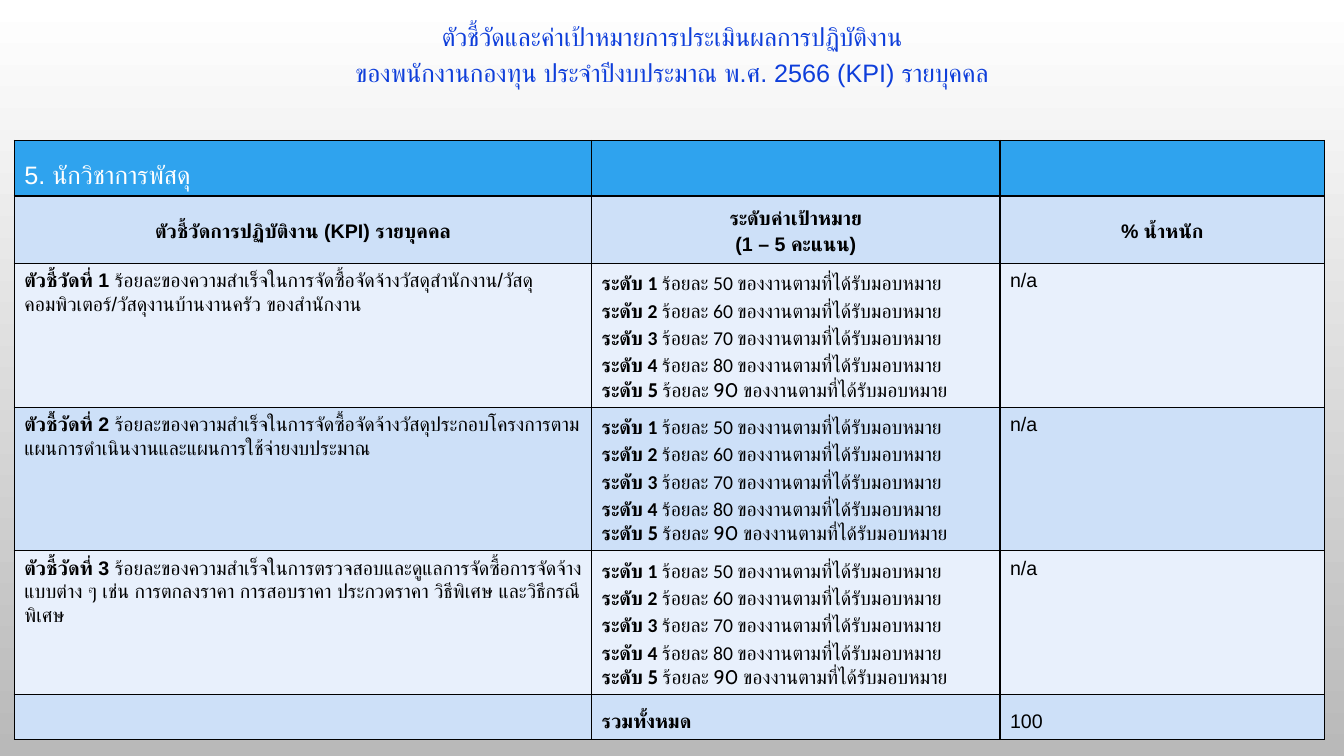
from dataclasses import dataclass
from typing import Optional, Union

from lxml.etree import SubElement
from pptx import Presentation
from pptx.dml.color import RGBColor
from pptx.enum.text import MSO_ANCHOR, MSO_AUTO_SIZE, PP_ALIGN
from pptx.oxml.ns import qn
from pptx.table import Table, _Cell
from pptx.text.text import TextFrame
from pptx.util import Cm, Length, Pt

COLORS = {
    "title": "0E3EDA", "head": "2FA3EE", "pale": "E8F0FC", "mid": "CDE0F8",
    "line": "000000", "text": "000000", "white": "FFFFFF", "grey": "B9B9B9",
}
WIDTHS = [14.55, 10.29, 8.18]
HEIGHTS = [1.4, 1.7, 3.56, 3.56, 3.56, 1.14]
TIGHT = Pt(16.8)


@dataclass
class Goal:
    name: str
    detail: str
    fill: str


GOALS = [
    Goal("ตัวชี้วัดที่ 1 ", "ร้อยละของความสำเร็จในการจัดซื้อจัดจ้างวัสดุสำนักงาน/วัสดุ"
         "คอมพิวเตอร์/วัสดุงานบ้านงานครัว ของสำนักงาน", "pale"),
    Goal("ตัวชี้วัดที่ 2 ", "ร้อยละของความสำเร็จในการจัดซื้อจัดจ้างวัสดุประกอบโครงการตาม"
         "แผนการดำเนินงานและแผนการใช้จ่ายงบประมาณ", "mid"),
    Goal("ตัวชี้วัดที่ 3 ", "ร้อยละของความสำเร็จในการตรวจสอบและดูแลการจัดซื้อการจัดจ้าง"
         "แบบต่าง ๆ เช่น การตกลงราคา การสอบราคา ประกวดราคา วิธีพิเศษ และวิธีกรณีพิเศษ", "pale"),
]


def color(name: str) -> RGBColor:
    return RGBColor.from_string(COLORS[name])


def write(frame: TextFrame, text: str, *, lead: str = "", size: int = 14,
          font: str = "Arial", ink: str = "text", bold: bool = False,
          align: Optional[PP_ALIGN] = None,
          space: Union[float, Length] = 1.0) -> None:
    """Add a paragraph, with an optional bold lead before the text."""
    para = frame.paragraphs[0] if not frame.text else frame.add_paragraph()
    para.line_spacing = space
    para.space_before = Pt(0)
    if align is not None:
        para.alignment = align
    for part, heavy in ((lead, True), (text, bold)):
        if not part:
            continue
        run = para.add_run()
        run.text = part
        run.font.size = Pt(size)
        run.font.name = font
        run.font.bold = heavy
        run.font.color.rgb = color(ink)
        # Thai letters use the complex script font
        SubElement(run.font._element, qn("a:cs")).set("typeface", font)


def style(cell: _Cell, fill: str) -> None:
    """Draw the four borders, then fill the cell."""
    props = cell._tc.get_or_add_tcPr()
    for side in ("a:lnL", "a:lnR", "a:lnT", "a:lnB"):
        line = SubElement(props, qn(side), w=str(Pt(1)))
        solid = SubElement(line, qn("a:solidFill"))
        SubElement(solid, qn("a:srgbClr")).set("val", COLORS["line"])
    cell.fill.solid()
    cell.fill.fore_color.rgb = color(fill)


def add_goal(table: Table, row: int, goal: Goal) -> None:
    name, levels, weight = (table.cell(row, col).text_frame for col in range(3))
    write(name, goal.detail, lead=goal.name, space=TIGHT)
    for level in range(1, 6):
        last = level == 5
        write(levels, f"ร้อยละ {40 + 10 * level} ของงานตามที่ได้รับมอบหมาย",
              lead=f"ระดับ {level} ", font="Cabin" if last else "Calibri",
              space=1.0 if last else 1.15)
    write(weight, "n/a", space=TIGHT)


def main() -> None:
    deck = Presentation()
    deck.slide_width, deck.slide_height = Cm(33.87), Cm(19.05)
    slide = deck.slides.add_slide(deck.slide_layouts[5])

    # Background
    back = slide.background.fill
    back.gradient()
    back.gradient_angle = 270
    for stop, name in zip(back.gradient_stops, ("white", "grey")):
        stop.color.rgb = color(name)

    # Title
    title = slide.shapes.title
    title.left, title.top = Cm(0), Cm(0.25)
    title.width, title.height = Cm(33.87), Cm(3.12)
    frame = title.text_frame
    frame.word_wrap = True
    frame.auto_size = MSO_AUTO_SIZE.NONE
    frame.vertical_anchor = MSO_ANCHOR.TOP
    for text in ("ตัวชี้วัดและค่าเป้าหมายการประเมินผลการปฏิบัติงาน",
                 "ของพนักงานกองทุน ประจำปีงบประมาณ พ.ศ. 2566 (KPI) รายบุคคล"):
        write(frame, text, size=18, ink="title", align=PP_ALIGN.CENTER, space=1.2)

    # Table grid
    table = slide.shapes.add_table(
        len(HEIGHTS), len(WIDTHS), Cm(0.36), Cm(3.54),
        Cm(sum(WIDTHS)), Cm(sum(HEIGHTS))).table
    table.first_row = table.horz_banding = False
    for column, width in zip(table.columns, WIDTHS):
        column.width = Cm(width)
    fills = ["head", "mid", *(goal.fill for goal in GOALS), "mid"]
    for row, height, fill in zip(table.rows, HEIGHTS, fills):
        row.height = Cm(height)
        for cell in row.cells:
            style(cell, fill)

    # Heading rows
    job = table.cell(0, 0)
    job.vertical_anchor = MSO_ANCHOR.MIDDLE
    write(job.text_frame, "5. นักวิชาการพัสดุ", size=18, ink="white", space=1.5)
    heads = [["ตัวชี้วัดการปฏิบัติงาน (KPI) รายบุคคล"],
             ["ระดับค่าเป้าหมาย", "(1 – 5 คะแนน)"], ["% น้ำหนัก"]]
    for col, lines in enumerate(heads):
        cell = table.cell(1, col)
        cell.vertical_anchor = MSO_ANCHOR.MIDDLE
        for text in lines:
            write(cell.text_frame, text, bold=True, align=PP_ALIGN.CENTER, space=1.2)

    # Goals and total
    for row, goal in enumerate(GOALS, start=2):
        add_goal(table, row, goal)
    write(table.cell(5, 1).text_frame, "รวมทั้งหมด", bold=True, space=1.5)
    write(table.cell(5, 2).text_frame, "100", space=1.5)

    deck.save("out.pptx")


if __name__ == "__main__":
    main()
